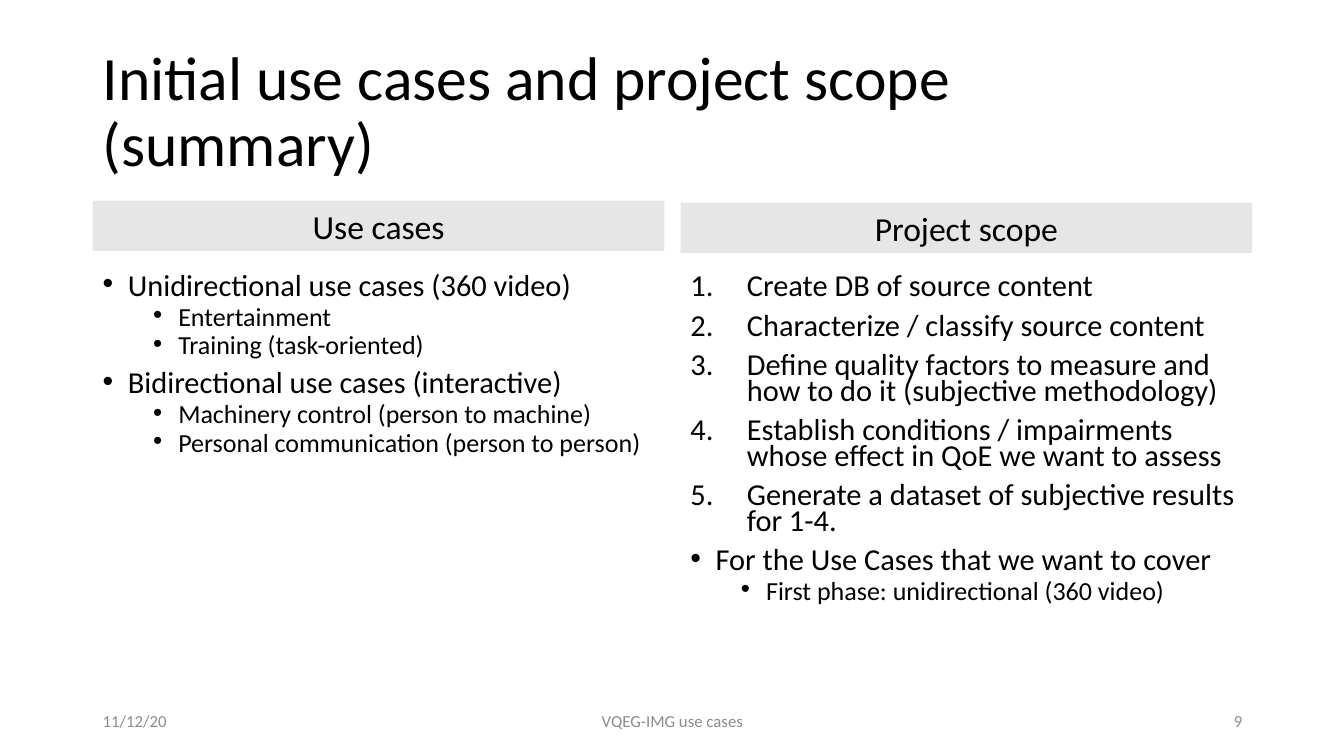
from pptx import Presentation
from pptx.dml.color import RGBColor
from pptx.enum.shapes import MSO_SHAPE
from pptx.enum.text import MSO_ANCHOR, PP_ALIGN
from pptx.oxml.ns import qn
from pptx.util import Inches, Pt
from lxml.etree import SubElement

BLACK = RGBColor(0x00, 0x00, 0x00)
GRAY = RGBColor(0x8C, 0x8C, 0x8C)
BAND = RGBColor(0xE7, 0xE6, 0xE6)

LEFT, RIGHT = 0.92, 6.75
COLUMN_WIDTH = 5.67

# kind: (level, left margin, hanging indent, space before, size)
LIST_STYLES = {
    "bullet": (0, 0.25, 0.25, 10, 21.7),
    "number": (0, 0.56, 0.56, 10, 21.7),
    "sub": (1, 0.75, 0.25, 5, 18.6),
}

USE_CASES = [
    ("bullet", "Unidirectional use cases (360 video)"),
    ("sub", "Entertainment"),
    ("sub", "Training (task-oriented)"),
    ("bullet", "Bidirectional use cases (interactive)"),
    ("sub", "Machinery control (person to machine)"),
    ("sub", "Personal communication (person to person)"),
]
PROJECT_SCOPE = [
    ("number", "Create DB of source content"),
    ("number", "Characterize / classify source content"),
    ("number", "Define quality factors to measure and how to do it (subjective methodology)"),
    ("number", "Establish conditions / impairments whose effect in QoE we want to assess"),
    ("number", "Generate a dataset of subjective results for 1-4."),
    ("bullet", "For the Use Cases that we want to cover"),
    ("sub", "First phase: unidirectional (360 video)"),
]


class SlideBuilder:
    font = "Calibri"

    def __init__(self, slide):
        self.slide = slide

    def style_runs(self, paragraph, size, color=BLACK):
        for run in paragraph.runs:
            run.font.name = self.font
            run.font.size = Pt(size)
            run.font.color.rgb = color

    def text_box(self, left, top, width, height):
        box = self.slide.shapes.add_textbox(
            Inches(left), Inches(top), Inches(width), Inches(height))
        box.text_frame.word_wrap = True
        return box.text_frame

    def label(self, text, left, top, width, height, size,
              color=BLACK, align=PP_ALIGN.LEFT, line_spacing=None):
        """Add one vertically centred paragraph."""
        frame = self.text_box(left, top, width, height)
        frame.vertical_anchor = MSO_ANCHOR.MIDDLE
        frame.text = text
        paragraph = frame.paragraphs[0]
        paragraph.alignment = align
        paragraph.line_spacing = line_spacing
        self.style_runs(paragraph, size, color)

    def heading(self, text, left, top):
        band = self.slide.shapes.add_shape(
            MSO_SHAPE.RECTANGLE, Inches(left), Inches(top),
            Inches(COLUMN_WIDTH), Inches(0.5))
        band.shadow.inherit = False
        band.fill.solid()
        band.fill.fore_color.rgb = BAND
        band.line.fill.background()
        frame = band.text_frame
        frame.vertical_anchor = MSO_ANCHOR.TOP
        frame.text = text
        frame.paragraphs[0].alignment = PP_ALIGN.CENTER
        self.style_runs(frame.paragraphs[0], 24)

    def item_list(self, items, left):
        frame = self.text_box(left, 2.69, COLUMN_WIDTH, 4.07)
        for index, (kind, text) in enumerate(items):
            paragraph = frame.add_paragraph() if index else frame.paragraphs[0]
            level, margin, hanging, space_before, size = LIST_STYLES[kind]
            paragraph.text = text
            paragraph.level = level
            self.add_marker(paragraph, kind, margin, hanging)
            paragraph.line_spacing = 0.7
            paragraph.space_before = Pt(space_before if index else 0)
            self.style_runs(paragraph, size)

    def add_marker(self, paragraph, kind, margin, hanging):
        properties = paragraph._p.get_or_add_pPr()
        properties.set("marL", str(Inches(margin)))
        properties.set("indent", str(-Inches(hanging)))
        if kind == "number":
            SubElement(properties, qn("a:buFont"), typeface="+mj-lt")
            SubElement(properties, qn("a:buAutoNum"), type="arabicPeriod")
        else:
            SubElement(properties, qn("a:buFont"), typeface="Arial")
            SubElement(properties, qn("a:buChar"), char="•")


def main():
    presentation = Presentation()
    presentation.slide_width = Inches(13.33)
    presentation.slide_height = Inches(7.5)
    builder = SlideBuilder(presentation.slides.add_slide(presentation.slide_layouts[6]))

    builder.label("Initial use cases and project scope\v(summary)",
                  LEFT, 0.4, 11.5, 1.45, 44, line_spacing=0.9)
    builder.item_list(USE_CASES, LEFT)
    builder.item_list(PROJECT_SCOPE, RIGHT)
    for text, left, width, align in (
            ("11/12/20", LEFT, 3, PP_ALIGN.LEFT),
            ("VQEG-IMG use cases", 4.42, 4.5, PP_ALIGN.CENTER),
            ("9", 9.42, 3, PP_ALIGN.RIGHT)):
        builder.label(text, left, 6.95, width, 0.4, 12, GRAY, align)
    builder.heading("Use cases", LEFT, 1.99)
    builder.heading("Project scope", RIGHT, 2.01)

    presentation.save("out.pptx")


if __name__ == "__main__":
    main()
